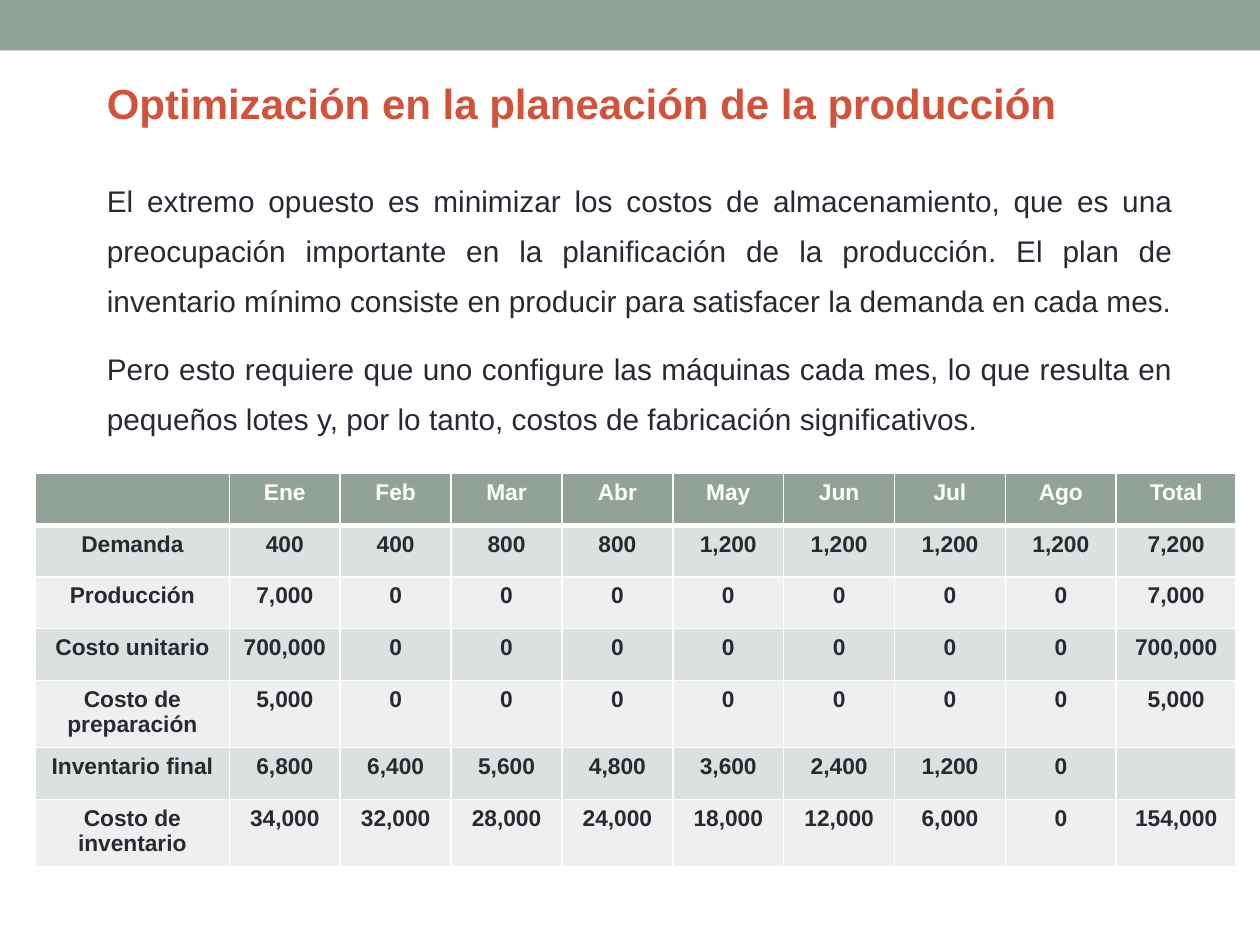
from dataclasses import dataclass

from lxml.etree import SubElement
from pptx import Presentation
from pptx.dml.color import RGBColor
from pptx.enum.shapes import MSO_SHAPE
from pptx.enum.text import MSO_AUTO_SIZE, PP_ALIGN
from pptx.oxml.ns import qn
from pptx.util import Inches, Pt


@dataclass(frozen=True)
class Theme:
    font: str = "Arial"
    green: str = "93A299"
    red: str = "D2533C"
    dark: str = "292934"
    white: str = "FFFFFF"
    bands: tuple = ("DCE0DE", "EEF0EF")
    title_size: int = 24
    body_size: int = 17
    cell_size: int = 13


@dataclass(frozen=True)
class TextBlock:
    box: tuple
    paragraphs: tuple
    size: int
    color: str
    bold: bool = False
    format: tuple = ()


T = Theme()

TITLE = TextBlock(
    (0.75, 0.57, 8.74, 0.5),
    ("Optimización en la planeación de la producción",),
    T.title_size, T.red, bold=True,
)
BODY = TextBlock(
    (0.75, 1.29, 8.66, 2.24),
    (
        "El extremo opuesto es minimizar los costos de almacenamiento, que es una "
        "preocupación importante en la planificación de la producción. El plan de "
        "inventario mínimo consiste en producir para satisfacer la demanda en cada mes.",
        "Pero esto requiere que uno configure las máquinas cada mes, lo que resulta en "
        "pequeños lotes y, por lo tanto, costos de fabricación significativos.",
    ),
    T.body_size, T.dark,
    format=(("alignment", PP_ALIGN.JUSTIFY), ("line_spacing", 1.4), ("space_before", Pt(10))),
)

# Production plan: label, eight months, total
ZEROS = ("0",) * 7
PLAN = (
    ("", "Ene", "Feb", "Mar", "Abr", "May", "Jun", "Jul", "Ago", "Total"),
    ("Demanda", "400", "400", "800", "800", "1,200", "1,200", "1,200", "1,200", "7,200"),
    ("Producción", "7,000", *ZEROS, "7,000"),
    ("Costo unitario", "700,000", *ZEROS, "700,000"),
    ("Costo de preparación", "5,000", *ZEROS, "5,000"),
    ("Inventario final", "6,800", "6,400", "5,600", "4,800", "3,600", "2,400", "1,200", "0", ""),
    ("Costo de inventario", "34,000", "32,000", "28,000", "24,000", "18,000", "12,000",
     "6,000", "0", "154,000"),
)
COL_WIDTHS = (1.54, *(0.88,) * 8, 0.95)
ROW_HEIGHTS = (0.41, 0.41, 0.41, 0.41, 0.52, 0.41, 0.52)


def write(p, text: str, size: int, color: str, bold: bool) -> None:
    r = p.add_run()
    r.text = text
    for name, value in {"name": T.font, "size": Pt(size), "bold": bold}.items():
        setattr(r.font, name, value)
    r.font.color.rgb = RGBColor.from_string(color)


def add_text(s, block: TextBlock) -> None:
    tf = s.shapes.add_textbox(*map(Inches, block.box)).text_frame
    tf.word_wrap = True
    tf.auto_size = MSO_AUTO_SIZE.SHAPE_TO_FIT_TEXT
    for i, text in enumerate(block.paragraphs):
        p = tf.add_paragraph() if i else tf.paragraphs[0]
        for name, value in block.format:
            setattr(p, name, value)
        write(p, text, block.size, block.color, block.bold)


def add_borders(cell, widths: dict) -> None:
    tc_pr = cell._tc.get_or_add_tcPr()
    for i, (side, width) in enumerate(widths.items()):
        ln = SubElement(tc_pr, qn(f"a:ln{side}"), w=str(Pt(width)))
        fill = SubElement(ln, qn("a:solidFill"))
        SubElement(fill, qn("a:srgbClr"), val=T.white)
        tc_pr.remove(ln)
        tc_pr.insert(i, ln)  # borders come before the fill


def add_plan(s, left: float, top: float) -> None:
    table = s.shapes.add_table(
        len(PLAN), len(COL_WIDTHS), Inches(left), Inches(top),
        Inches(sum(COL_WIDTHS)), Inches(sum(ROW_HEIGHTS)),
    ).table
    for col, width in zip(table.columns, COL_WIDTHS):
        col.width = Inches(width)
    for i, values in enumerate(PLAN):
        table.rows[i].height = Inches(ROW_HEIGHTS[i])
        header = i == 0
        fill = T.green if header else T.bands[(i - 1) % 2]
        borders = {"L": 1, "R": 1, "T": 3 if i == 1 else 1, "B": 3 if header else 1}
        for j, text in enumerate(values):
            cell = table.cell(i, j)
            cell.fill.solid()
            cell.fill.fore_color.rgb = RGBColor.from_string(fill)
            add_borders(cell, borders)
            p = cell.text_frame.paragraphs[0]
            p.alignment = PP_ALIGN.CENTER
            p.font.size = Pt(T.cell_size)
            if text:
                write(p, text, T.cell_size, T.white if header else T.dark, True)


def main() -> None:
    prs = Presentation()
    prs.slide_width, prs.slide_height = Inches(10), Inches(7.5)
    s = prs.slides.add_slide(prs.slide_layouts[6])

    # Top band
    sp = s.shapes.add_shape(MSO_SHAPE.RECTANGLE, 0, 0, prs.slide_width, Inches(0.4))
    sp.shadow.inherit = False
    sp.fill.solid()
    sp.fill.fore_color.rgb = RGBColor.from_string(T.green)
    sp.line.fill.background()

    # Text and table
    add_text(s, BODY)
    add_text(s, TITLE)
    add_plan(s, 0.28, 3.76)

    prs.save("out.pptx")


if __name__ == "__main__":
    main()
